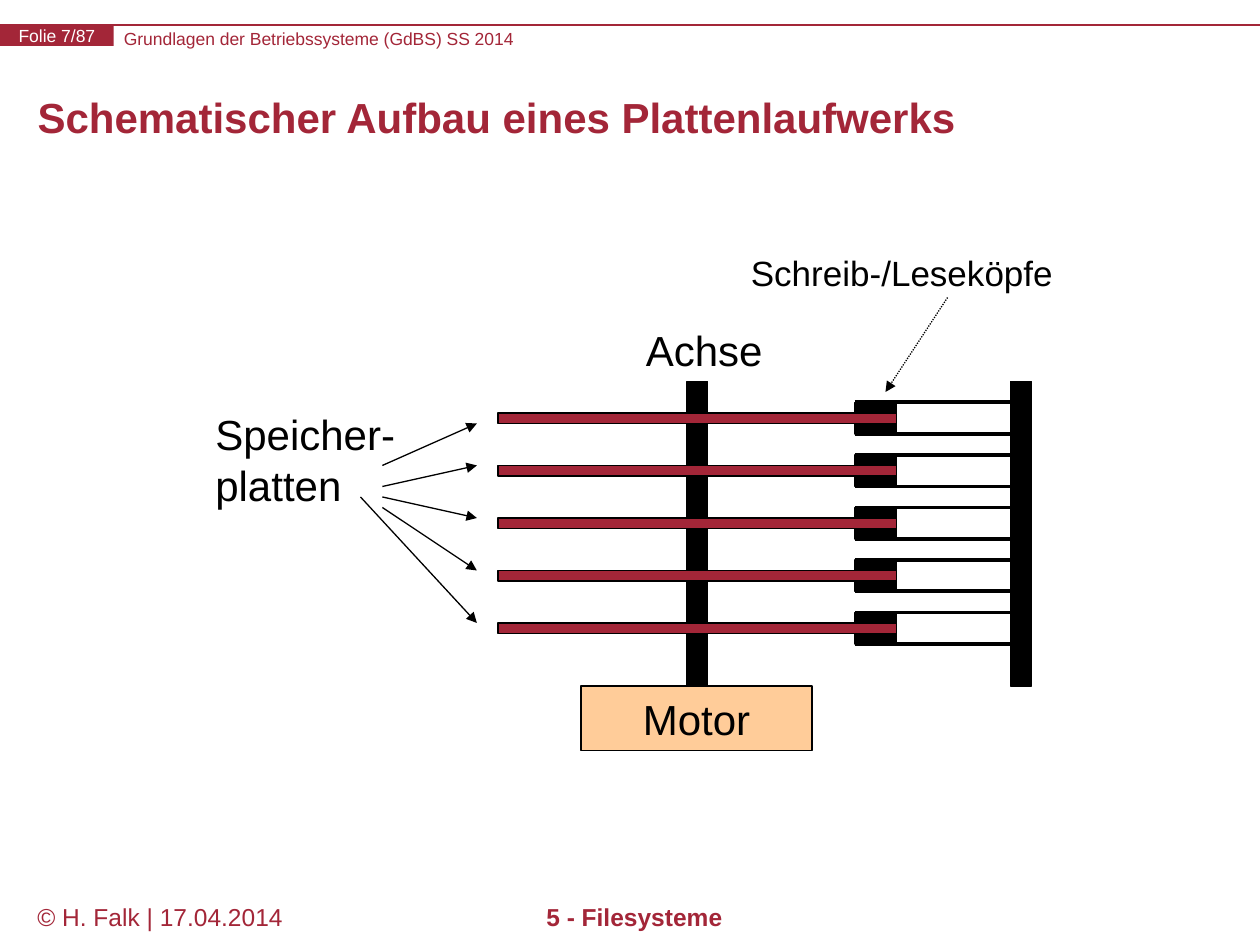
from lxml import etree
from pptx import Presentation
from pptx.dml.color import RGBColor
from pptx.enum.dml import MSO_LINE
from pptx.enum.shapes import MSO_CONNECTOR, MSO_SHAPE
from pptx.enum.text import MSO_ANCHOR, MSO_AUTO_SIZE, PP_ALIGN
from pptx.oxml.ns import qn
from pptx.util import Pt

RECTANGLE = MSO_SHAPE.RECTANGLE
STRAIGHT = MSO_CONNECTOR.STRAIGHT
DOTTED = MSO_LINE.ROUND_DOT
LEFT, CENTER = PP_ALIGN.LEFT, PP_ALIGN.CENTER
TOP, MIDDLE = MSO_ANCHOR.TOP, MSO_ANCHOR.MIDDLE
NO_AUTO_SIZE = MSO_AUTO_SIZE.NONE

COLORS = {"red": "A32638", "black": "000000", "white": "FFFFFF", "peach": "FFCC99"}
FONT = "Arial"


def rgb(name):
    return RGBColor.from_string(COLORS[name])


class SlideBuilder:
    """Holds the style and the current slide; all lengths are in points."""

    def __init__(self, slide):
        self.slide = slide

    def label(self, shape, text, size=24, color="black", bold=False,
              align=LEFT, anchor=TOP, inset=None, wrap=True):
        frame = shape.text_frame
        values = {"word_wrap": wrap, "auto_size": NO_AUTO_SIZE, "vertical_anchor": anchor}
        if inset is not None:
            for side in ("left", "right", "top", "bottom"):
                values["margin_" + side] = Pt(inset)
        for name, value in values.items():
            setattr(frame, name, value)
        frame.text = text
        paragraph = frame.paragraphs[0]
        paragraph.alignment = align
        paragraph.space_before = Pt(0)
        for name, value in {"name": FONT, "size": Pt(size), "bold": bold}.items():
            setattr(paragraph.font, name, value)
        paragraph.font.color.rgb = rgb(color)
        return paragraph

    def title(self, text, left, top, width, height):
        shape = self.slide.shapes.title
        box = {"left": left, "top": top, "width": width, "height": height}
        for name, value in box.items():
            setattr(shape, name, Pt(value))
        paragraph = self.label(shape, text, color="red", bold=True, anchor=MIDDLE)
        paragraph.line_spacing = Pt(24)

    def text(self, text, left, top, width, height, **style):
        shape = self.slide.shapes.add_textbox(Pt(left), Pt(top), Pt(width), Pt(height))
        self.label(shape, text, **style)

    def rectangle(self, left, top, width, height, fill="black", outline="black"):
        shape = self.slide.shapes.add_shape(
            RECTANGLE, Pt(left), Pt(top), Pt(width), Pt(height))
        shape.shadow.inherit = False
        shape.fill.solid()
        shape.fill.fore_color.rgb = rgb(fill)
        if outline:
            shape.line.color.rgb = rgb(outline)
            shape.line.width = Pt(0.75)
        else:
            shape.line.fill.background()
        return shape

    def line(self, start, end, color="black", width=0.75, dash=None, arrow=False):
        connector = self.slide.shapes.add_connector(
            STRAIGHT, *(Pt(value) for value in (*start, *end)))
        connector.line.color.rgb = rgb(color)
        connector.line.width = Pt(width)
        if dash:
            connector.line.dash_style = dash
        properties = connector._element.spPr
        if arrow:
            etree.SubElement(properties.find(qn("a:ln")), qn("a:tailEnd"), type="triangle")
        etree.SubElement(properties, qn("a:effectLst"))


def main():
    presentation = Presentation()
    presentation.slide_width, presentation.slide_height = Pt(720), Pt(540)
    slide = presentation.slides.add_slide(presentation.slide_layouts[5])
    builder = SlideBuilder(slide)

    # Header, title and footer
    builder.line((0, 14.25), (720, 14.25), color="red")
    builder.text("Grundlagen der Betriebssysteme (GdBS) SS 2014",
                 70.75, 15.75, 475, 12, size=10, color="red", inset=0)
    number = builder.rectangle(0, 14.25, 65, 12, fill="red", outline=None)
    builder.label(number, "Folie 7/87", size=10, color="white",
                  align=CENTER, anchor=MIDDLE, inset=0, wrap=False)
    builder.title("Schematischer Aufbau eines Plattenlaufwerks", 14.25, 43, 692, 52)
    builder.text("© H. Falk | 17.04.2014", 14.25, 512, 158, 36, size=14, color="red")
    builder.text("5 - Filesysteme", 144.5, 512, 436, 36,
                 size=14, color="red", bold=True, align=CENTER)

    # Labelled arrows to the disks
    builder.text("Speicher-platten", 116, 230, 138, 65)
    starts = [(218.5, 266), (218.5, 278), (218.5, 284), (218.5, 290), (206, 284)]
    for start, end_y in zip(starts, (242, 266, 296, 326, 356)):
        builder.line(start, (272.5, end_y), arrow=True)

    # Axis, motor and head carrier
    axis_top, axis_height = 218, 174
    builder.rectangle(392.5, axis_top, 12, axis_height)
    motor = builder.rectangle(332, axis_top + axis_height, 132, 37, fill="peach")
    builder.label(motor, "Motor", align=CENTER, anchor=MIDDLE)
    builder.text("Achse", 362, 182, 84, 36)
    builder.rectangle(577.5, axis_top, 12, axis_height)

    # Disks, each between an upper and a lower head with its arm
    disk_count, pitch, thickness = 5, 30, 6
    head_left, carrier_middle = 488.5, 583.5
    for index in range(disk_count):
        upper = 230 + index * pitch
        lower = upper + 2 * thickness
        builder.rectangle(284.5, upper + thickness, 228, thickness, fill="red")
        for head_top, arm_y in ((upper, upper), (lower, lower + thickness)):
            builder.rectangle(head_left, head_top, 24, thickness)
            builder.line((head_left, arm_y), (carrier_middle, arm_y), width=2.25)

    # Label of the heads
    builder.text("Schreib-/Leseköpfe", 422, 140, 197, 31, size=20)
    builder.line((541.5, 170), (506, 224), dash=DOTTED, arrow=True)

    presentation.save("out.pptx")


if __name__ == "__main__":
    main()
